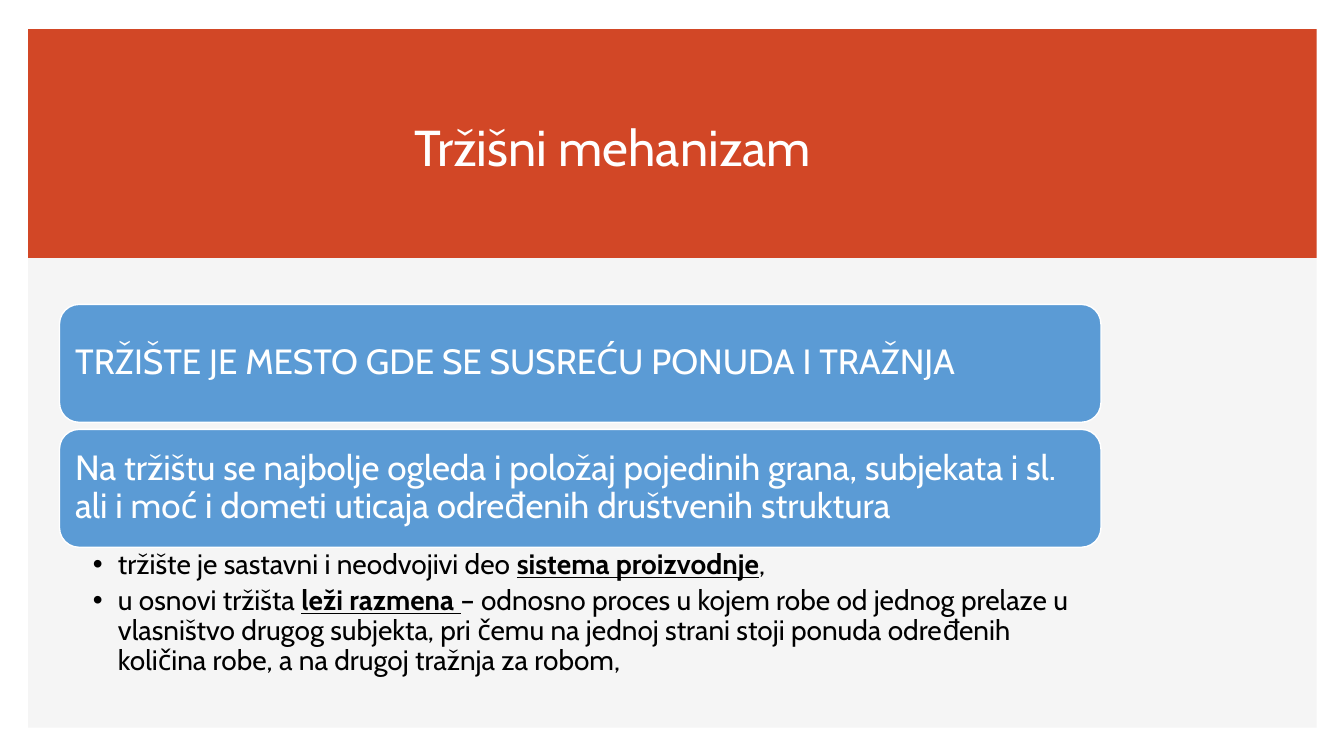
"""Builds the slide on the market mechanism."""
from dataclasses import dataclass

from lxml import etree
from pptx import Presentation
from pptx.dml.color import RGBColor
from pptx.enum.shapes import MSO_SHAPE
from pptx.enum.text import MSO_ANCHOR, MSO_AUTO_SIZE, PP_ALIGN
from pptx.oxml.ns import qn
from pptx.slide import Slide
from pptx.util import Emu, Pt

EMU_PER_PX = 9144
TITLE_AND_CONTENT = 1
RECT, ROUNDED = MSO_SHAPE.RECTANGLE, MSO_SHAPE.ROUNDED_RECTANGLE
TOP, MIDDLE, BOTTOM = MSO_ANCHOR.TOP, MSO_ANCHOR.MIDDLE, MSO_ANCHOR.BOTTOM
LEFT, CENTER = PP_ALIGN.LEFT, PP_ALIGN.CENTER
NO_AUTOFIT = MSO_AUTO_SIZE.NONE
FONT = "Cabin"
WHITE, BLACK = "FFFFFF", "000000"
CONTENT_LEFT, CONTENT_WIDTH = 59, 1033
STATEMENT_TOP, STATEMENT_HEIGHT, STATEMENT_PITCH = 302, 117, 124
BULLET_INDENT = 25


@dataclass(frozen=True)
class Box:
    """Position and size in px."""
    left: int
    top: int
    width: int
    height: int


@dataclass(frozen=True)
class Panel:
    """A filled background area."""
    box: Box
    fill: str


@dataclass(frozen=True)
class Phrase:
    """A piece of a bullet, emphasised or plain."""
    text: str
    strong: bool = False


PANELS = (
    Panel(Box(28, 29, 1278, 693), "F5F5F5"),
    Panel(Box(28, 29, 1278, 227), "D24726"),
)
STATEMENTS = (
    "TRŽIŠTE JE MESTO GDE SE SUSREĆU PONUDA I TRAŽNJA",
    "Na tržištu se najbolje ogleda i položaj pojedinih grana, subjekata i sl. "
    "ali i moć i dometi uticaja određenih društvenih struktura",
)
BULLETS = (
    (
        Phrase("tržište je sastavni i neodvojivi deo "),
        Phrase("sistema proizvodnje", True),
        Phrase(","),
    ),
    (
        Phrase("u osnovi tržišta "),
        Phrase("leži razmena ", True),
        Phrase("– odnosno proces u kojem robe od jednog prelaze u vlasništvo "
               "drugog subjekta, pri čemu na jednoj strani stoji ponuda "
               "određenih količina robe, a na drugoj tražnja za robom,"),
    ),
)


def px(length: int) -> Emu:
    """Turn px into EMU."""
    return Emu(length * EMU_PER_PX)


def color(value: str) -> RGBColor:
    """Turn a hex string into a colour."""
    return RGBColor.from_string(value)


def apply(target, values: dict) -> None:
    """Set every attribute given by the format values."""
    for attribute, value in values.items():
        setattr(target, attribute, value)


def place(shape, box: Box) -> None:
    """Move a shape to its box."""
    apply(shape, {"left": px(box.left), "top": px(box.top),
                  "width": px(box.width), "height": px(box.height)})


def format_frame(frame, anchor, insets: tuple[int, int, int, int]) -> None:
    """Set anchor, wrapping and insets of a text frame."""
    sides = ("margin_left", "margin_top", "margin_right", "margin_bottom")
    apply(frame, {"word_wrap": True, "auto_size": NO_AUTOFIT,
                  "vertical_anchor": anchor})
    apply(frame, dict(zip(sides, map(px, insets))))


def add_run(paragraph, text: str, size: int, ink: str, strong: bool = False) -> None:
    """Append a formatted run."""
    run = paragraph.add_run()
    run.text = text
    apply(run.font, {"name": FONT, "size": Pt(size), "bold": strong,
                     "underline": strong})
    run.font.color.rgb = color(ink)


def add_filled(slide: Slide, kind, box: Box, fill: str):
    """Add a flat filled shape without an outline."""
    shape = slide.shapes.add_shape(kind, *map(px, (box.left, box.top, box.width, box.height)))
    shape.shadow.inherit = False
    shape.fill.solid()
    shape.fill.fore_color.rgb = color(fill)
    shape.line.fill.background()
    return shape


def add_statement(slide: Slide, index: int, text: str) -> None:
    """Add one rounded statement in the stack."""
    top = STATEMENT_TOP + index * STATEMENT_PITCH
    statement = add_filled(
        slide, ROUNDED, Box(CONTENT_LEFT, top, CONTENT_WIDTH, STATEMENT_HEIGHT), "5B9BD5")
    statement.line.color.rgb = color(WHITE)
    statement.line.width = Pt(1)
    format_frame(statement.text_frame, MIDDLE, (10, 10, 10, 10))
    paragraph = statement.text_frame.paragraphs[0]
    apply(paragraph, {"alignment": LEFT, "line_spacing": 0.9})
    add_run(paragraph, text, 25, WHITE)


def fill_title(title) -> None:
    """Write the heading."""
    place(title, Box(232, 110, 752, 70))
    format_frame(title.text_frame, BOTTOM, (10, 5, 10, 5))
    paragraph = title.text_frame.paragraphs[0]
    paragraph.alignment = CENTER
    add_run(paragraph, "Tržišni mehanizam", 36, WHITE)


def fill_bullets(body) -> None:
    """Write the bullet list."""
    place(body, Box(CONTENT_LEFT, 543, CONTENT_WIDTH, 150))
    frame = body.text_frame
    format_frame(frame, TOP, (33, 3, 19, 3))
    for index, phrases in enumerate(BULLETS):
        paragraph = frame.add_paragraph() if index else frame.paragraphs[0]
        apply(paragraph, {"level": 1, "alignment": LEFT, "line_spacing": 0.9,
                          "space_before": Pt(0), "space_after": Pt(4)})
        properties = paragraph._p.get_or_add_pPr()
        properties.set("marL", str(px(BULLET_INDENT)))
        properties.set("indent", str(px(-BULLET_INDENT)))
        etree.SubElement(properties, qn("a:buFont"), typeface="Arial")
        etree.SubElement(properties, qn("a:buChar"), char="•")
        for phrase in phrases:
            add_run(paragraph, phrase.text, 20, BLACK, phrase.strong)


def main() -> None:
    """Build and save the presentation."""
    presentation = Presentation()
    apply(presentation, {"slide_width": px(1333), "slide_height": px(750)})
    slide = presentation.slides.add_slide(presentation.slide_layouts[TITLE_AND_CONTENT])
    title, body = slide.placeholders
    for panel in PANELS:
        area = add_filled(slide, RECT, panel.box, panel.fill)
        title.element.addprevious(area.element)
    fill_title(title)
    for index, text in enumerate(STATEMENTS):
        add_statement(slide, index, text)
    fill_bullets(body)
    presentation.save("out.pptx")


if __name__ == "__main__":
    main()
